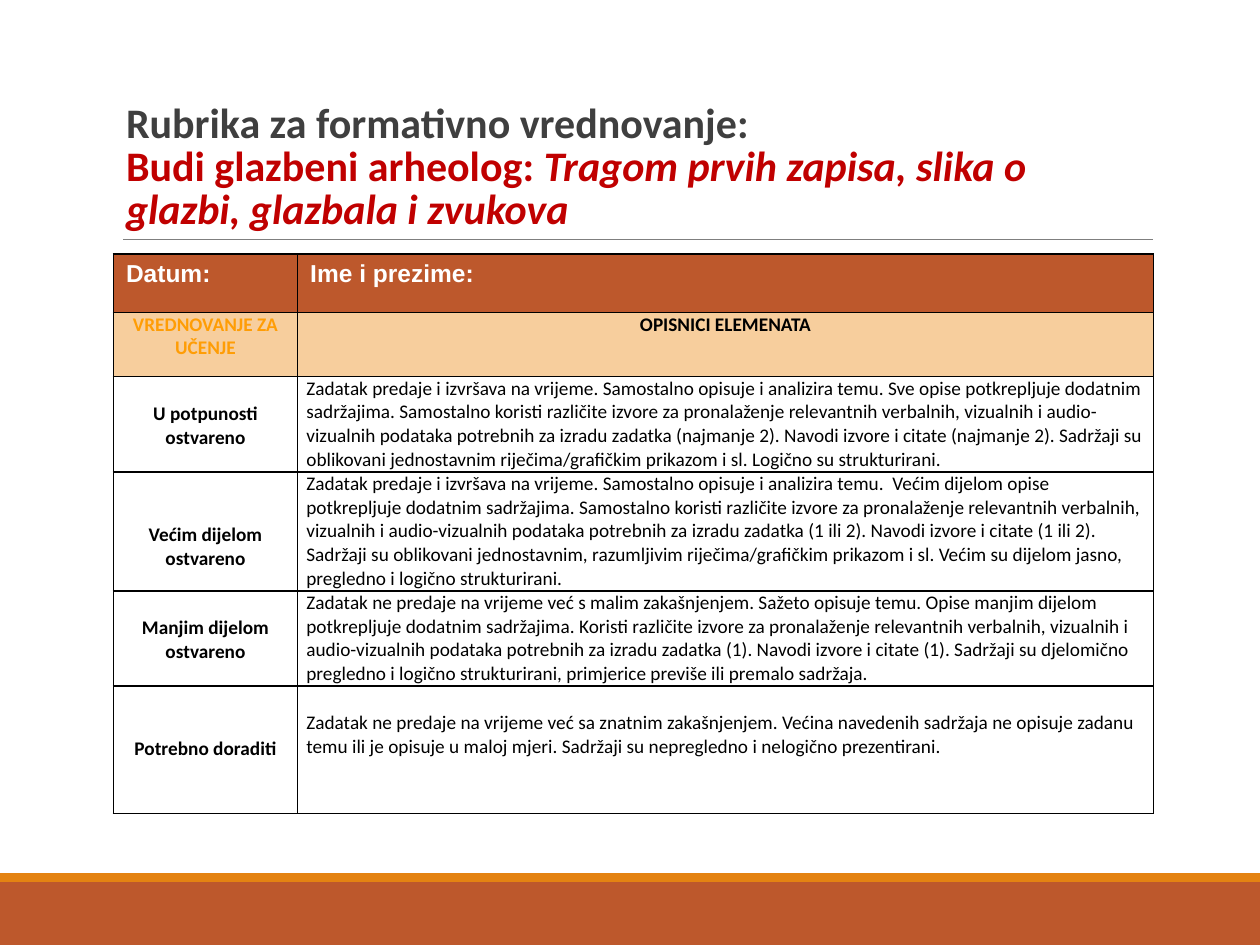
from lxml import etree
from pptx import Presentation
from pptx.dml.color import RGBColor
from pptx.enum.shapes import MSO_CONNECTOR, MSO_SHAPE
from pptx.enum.text import MSO_ANCHOR, MSO_AUTO_SIZE, PP_ALIGN
from pptx.oxml.ns import qn
from pptx.util import Pt

STRAIGHT = MSO_CONNECTOR.STRAIGHT
RECTANGLE = MSO_SHAPE.RECTANGLE
BOTTOM = MSO_ANCHOR.BOTTOM
NO_AUTOFIT = MSO_AUTO_SIZE.NONE
LEFT, CENTER = PP_ALIGN.LEFT, PP_ALIGN.CENTER

RUST, ORANGE, PEACH, WHITE, BLACK = "BD582C", "E48312", "F7CE9D", "FFFFFF", "000000"
LINE = 14.6  # one line of table text with its spacing


def color(hex_code):
    return RGBColor.from_string(hex_code)


def add_borders(cell):
    properties = cell._tc.get_or_add_tcPr()
    for side in ("lnL", "lnR", "lnT", "lnB"):
        border = etree.SubElement(properties, qn(f"a:{side}"), w=str(Pt(1)))
        fill = etree.SubElement(border, qn("a:solidFill"))
        etree.SubElement(fill, qn("a:srgbClr"), val=BLACK)


deck = Presentation()
deck.slide_width, deck.slide_height = Pt(720), Pt(540)
slide = deck.slides.add_slide(deck.slide_layouts[5])

# Footer bands and title rule
for top, height, fill in ((504, 36, RUST), (499, 5, ORANGE)):
    band = slide.shapes.add_shape(RECTANGLE, Pt(0), Pt(top), Pt(720), Pt(height))
    band.shadow.inherit = False
    band.fill.solid()
    band.fill.fore_color.rgb = color(fill)
    band.line.fill.background()

rule = slide.shapes.add_connector(STRAIGHT, Pt(70.5), Pt(136.8), Pt(659), Pt(136.8))
rule.line.color.rgb = color("7F7F7F")
rule.line.width = Pt(0.75)
etree.SubElement(rule._element.spPr, qn("a:effectLst"))

# Title
title = slide.shapes.title
title.left, title.top, title.width, title.height = Pt(64.8), Pt(22.3), Pt(594), Pt(114.5)
frame = title.text_frame
frame.auto_size = NO_AUTOFIT
frame.word_wrap = True
frame.vertical_anchor = BOTTOM
para = frame.paragraphs[0]
para.alignment = LEFT
para.line_spacing = 0.85
para.font.name, para.font.size, para.font.bold = "Calibri", Pt(24), True
for text, text_color, italic in (
    ("Rubrika za formativno vrednovanje:", "3F3F3F", False),
    ("Budi glazbeni arheolog: ", "C00000", False),
    ("Tragom prvih zapisa, slika o glazbi, glazbala i zvukova", "C00000", True),
):
    span = para.add_run()
    span.text = text
    span.font.color.rgb = color(text_color)
    span.font.italic = italic
    if text.endswith("vrednovanje:"):
        para.add_line_break()

# Rubric: row height, label, description, lines left free above each of them
rows = [
    (33.5, "Datum:", "Ime i prezime:", 0, 0),
    (36.6, "VREDNOVANJE ZA UČENJE", "OPISNICI ELEMENATA", 0, 0),
    (54.3, "U potpunosti ostvareno",
     "Zadatak predaje i izvršava na vrijeme. Samostalno opisuje i analizira temu. "
     "Sve opise potkrepljuje dodatnim sadržajima. Samostalno koristi različite izvore "
     "za pronalaženje relevantnih verbalnih, vizualnih i audio-vizualnih podataka "
     "potrebnih za izradu zadatka (najmanje 2). Navodi izvore i citate (najmanje 2). "
     "Sadržaji su oblikovani jednostavnim riječima/grafičkim prikazom i sl. "
     "Logično su strukturirani.", 1, 0),
    (68, "Većim dijelom ostvareno",
     "Zadatak predaje i izvršava na vrijeme. Samostalno opisuje i analizira temu.  "
     "Većim dijelom opise potkrepljuje dodatnim sadržajima. Samostalno koristi različite "
     "izvore za pronalaženje relevantnih verbalnih, vizualnih i audio-vizualnih podataka "
     "potrebnih za izradu zadatka (1 ili 2). Navodi izvore i citate (1 ili 2). Sadržaji su "
     "oblikovani jednostavnim, razumljivim riječima/grafičkim prikazom i sl. Većim su "
     "dijelom jasno, pregledno i logično strukturirani.", 2, 0),
    (54.3, "Manjim dijelom ostvareno",
     "Zadatak ne predaje na vrijeme već s malim zakašnjenjem. Sažeto opisuje temu. "
     "Opise manjim dijelom potkrepljuje dodatnim sadržajima. Koristi različite izvore "
     "za pronalaženje relevantnih verbalnih, vizualnih i audio-vizualnih podataka "
     "potrebnih za izradu zadatka (1). Navodi izvore i citate (1). Sadržaji su djelomično "
     "pregledno i logično strukturirani, primjerice previše ili premalo sadržaja.", 1, 0),
    (73, "Potrebno doraditi",
     "Zadatak ne predaje na vrijeme već sa znatnim zakašnjenjem. Većina navedenih sadržaja "
     "ne opisuje zadanu temu ili je opisuje u maloj mjeri. Sadržaji su nepregledno i "
     "nelogično prezentirani.", 2, 1),
]
table_height = sum(row[0] for row in rows)
table = slide.shapes.add_table(
    len(rows), 2, Pt(64.8), Pt(145.2), Pt(594.4), Pt(table_height)).table
table.first_row = table.horz_banding = False
table.columns[0].width, table.columns[1].width = Pt(105.3), Pt(489.1)

for row_index, (height, label, description, *free_lines) in enumerate(rows):
    table.rows[row_index].height = Pt(height)
    for column_index, text in enumerate((label, description)):
        cell = table.cell(row_index, column_index)
        add_borders(cell)
        cell.fill.solid()
        cell.text = text
        para = cell.text_frame.paragraphs[0]
        para.font.bold = row_index < 2 or column_index == 0
        if row_index == 0:
            cell.fill.fore_color.rgb = color(RUST)
            para.font.name, para.font.size = "Arial", Pt(14)
            para.font.color.rgb = color(WHITE)
            continue
        cell.fill.fore_color.rgb = color(PEACH if row_index == 1 else WHITE)
        cell.margin_left = cell.margin_right = Pt(5)
        cell.margin_top = Pt(free_lines[column_index] * LINE)
        cell.margin_bottom = Pt(0)
        para.alignment = CENTER if para.font.bold else LEFT
        para.space_before = Pt(1.2)
        para.font.name, para.font.size = "Calibri", Pt(11)
        is_corner = row_index == 1 and column_index == 0
        para.font.color.rgb = color("FF9D05" if is_corner else BLACK)

deck.save("out.pptx")
